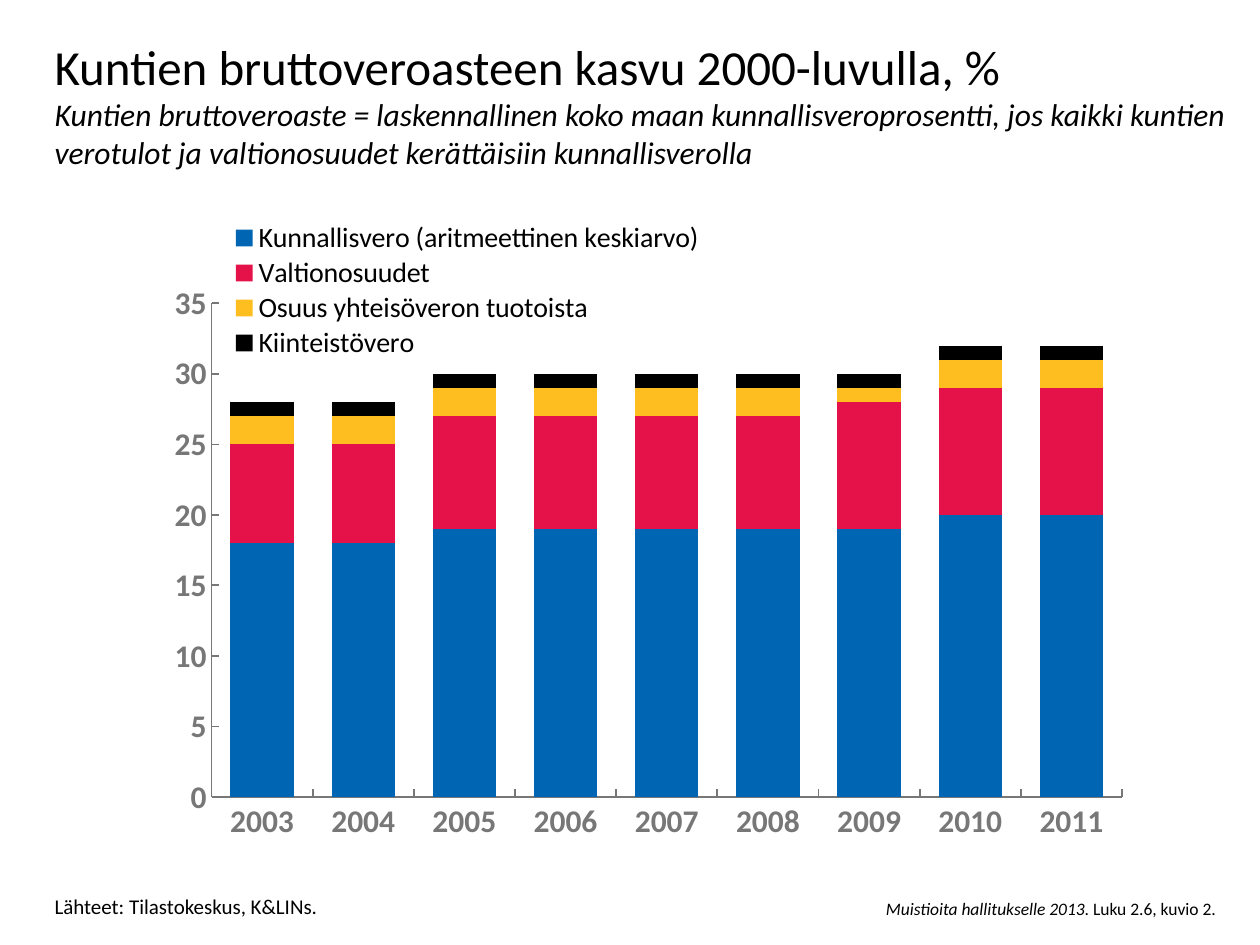
"""Build a slide with a stacked column chart of Finnish municipal gross tax rates."""
from pptx import Presentation
from pptx.chart.data import CategoryChartData as Data
from pptx.dml.color import RGBColor as Rgb
from pptx.enum.chart import XL_CHART_TYPE as Kind, XL_LEGEND_POSITION as Pos, XL_TICK_MARK as Tick
from pptx.enum.text import MSO_ANCHOR as Anchor, MSO_AUTO_SIZE as Fit, PP_ALIGN as Align
from pptx.oxml import parse_xml
from pptx.oxml.ns import nsdecls, qn
from pptx.util import Cm, Pt

BLACK = Rgb(0x00, 0x00, 0x00)
GREY = Rgb(0x77, 0x77, 0x77)
BLUE = Rgb(0x00, 0x66, 0xB3)
RED = Rgb(0xE4, 0x12, 0x49)
GOLD = Rgb(0xFE, 0xBE, 0x20)
FONT = "Calibri"


def fill_text(shape, box, paras, align=Align.LEFT):
    shape.left, shape.top, shape.width, shape.height = [Cm(n) for n in box]
    frame = shape.text_frame
    frame.word_wrap = True
    frame.auto_size = Fit.NONE
    frame.vertical_anchor = Anchor.TOP
    frame.margin_left = frame.margin_top = frame.margin_right = frame.margin_bottom = 0
    for i, runs in enumerate(paras):
        para = frame.add_paragraph() if i else frame.paragraphs[0]
        para.alignment = align
        for text, size, slant in runs:
            run = para.add_run()
            run.text = text
            font = run.font
            font.name, font.size, font.italic = FONT, Pt(size), slant
            font.color.rgb = BLACK


def set_layout(node, index, box, inner=""):
    for old in node.findall(qn("c:layout")):
        node.remove(old)
    modes = '<c:xMode val="edge"/><c:yMode val="edge"/>'
    sizes = "".join(f'<c:{tag} val="{num / 100:.3f}"/>' for tag, num in zip("xywh", box))
    node.insert(index, parse_xml(
        f'<c:layout {nsdecls("c")}><c:manualLayout>{inner}{modes}{sizes}</c:manualLayout></c:layout>'))


deck = Presentation()
deck.slide_width, deck.slide_height = Cm(25.4), Cm(19.05)
slide = deck.slides.add_slide(deck.slide_layouts[5])
shapes = slide.shapes

fill_text(shapes.title, (1.1, 0.73, 24.3, 2.74), [
    [("Kuntien bruttoveroasteen kasvu 2000-luvulla, %", 28, False)],
    [("Kuntien bruttoveroaste = laskennallinen koko maan kunnallisveroprosentti, "
      "jos kaikki kuntien verotulot ja valtionosuudet kerättäisiin kunnallisverolla", 18, True)],
])
fill_text(shapes.add_textbox(0, 0, 0, 0), (1.1, 18.02, 14.6, 0.51),
          [[("Lähteet: Tilastokeskus, K&LINs.", 12, False)]])
fill_text(shapes.add_textbox(0, 0, 0, 0), (14.83, 18.1, 9.68, 0.43),
          [[("Muistioita hallitukselle 2013", 10, True), (". Luku 2.6, kuvio 2.", 10, False)]],
          Align.RIGHT)

series = [
    ("Kunnallisvero (aritmeettinen keskiarvo)", BLUE, (18, 18, 19, 19, 19, 19, 19, 20, 20)),
    ("Valtionosuudet", RED, (7, 7, 8, 8, 8, 8, 9, 9, 9)),
    ("Osuus yhteisöveron tuotoista", GOLD, (2, 2, 2, 2, 2, 2, 1, 2, 2)),
    ("Kiinteistövero", BLACK, (1, 1, 1, 1, 1, 1, 1, 1, 1)),
]
data = Data(number_format="0")
data.categories = [str(year) for year in range(2003, 2012)]
for name, hue, vals in series:
    data.add_series(name, vals)
chart = shapes.add_chart(Kind.COLUMN_STACKED, Cm(2.97), Cm(3.76), Cm(19.91), Cm(13.54), data).chart
chart.has_title = False
chart.font.name, chart.font.size, chart.font.bold = "Cabin", Pt(8), True
chart.font.color.rgb = BLACK

plot = chart.plots[0]
plot.gap_width, plot.overlap, plot.vary_by_categories = 60, 100, False
for bar, (name, hue, vals) in zip(plot.series, series):
    bar.format.fill.solid()
    bar.format.fill.fore_color.rgb = hue
set_layout(plot._element.getparent(), 0, (6.5, 17.4, 92.2, 73.5),
           '<c:layoutTarget val="inner"/>')

scale = chart.value_axis
scale.minimum_scale, scale.maximum_scale, scale.major_unit = 0, 35, 5
scale.tick_labels.number_format = "0"
scale.tick_labels.number_format_is_linked = False
for axis in (scale, chart.category_axis):
    axis.has_major_gridlines = False
    axis.major_tick_mark, axis.minor_tick_mark = Tick.INSIDE, Tick.NONE
    axis.format.line.color.rgb = GREY
    axis.format.line.width = Pt(1)
    font = axis.tick_labels.font
    font.name, font.size, font.bold = FONT, Pt(18), True
    font.color.rgb = GREY

chart.has_legend = True
legend = chart.legend
legend.position = Pos.TOP
legend.include_in_layout = False
font = legend.font
font.name, font.size, font.bold = FONT, Pt(16), False
font.color.rgb = BLACK
set_layout(legend._element, 1, (7.9, 5, 49, 21))

deck.save("out.pptx")
